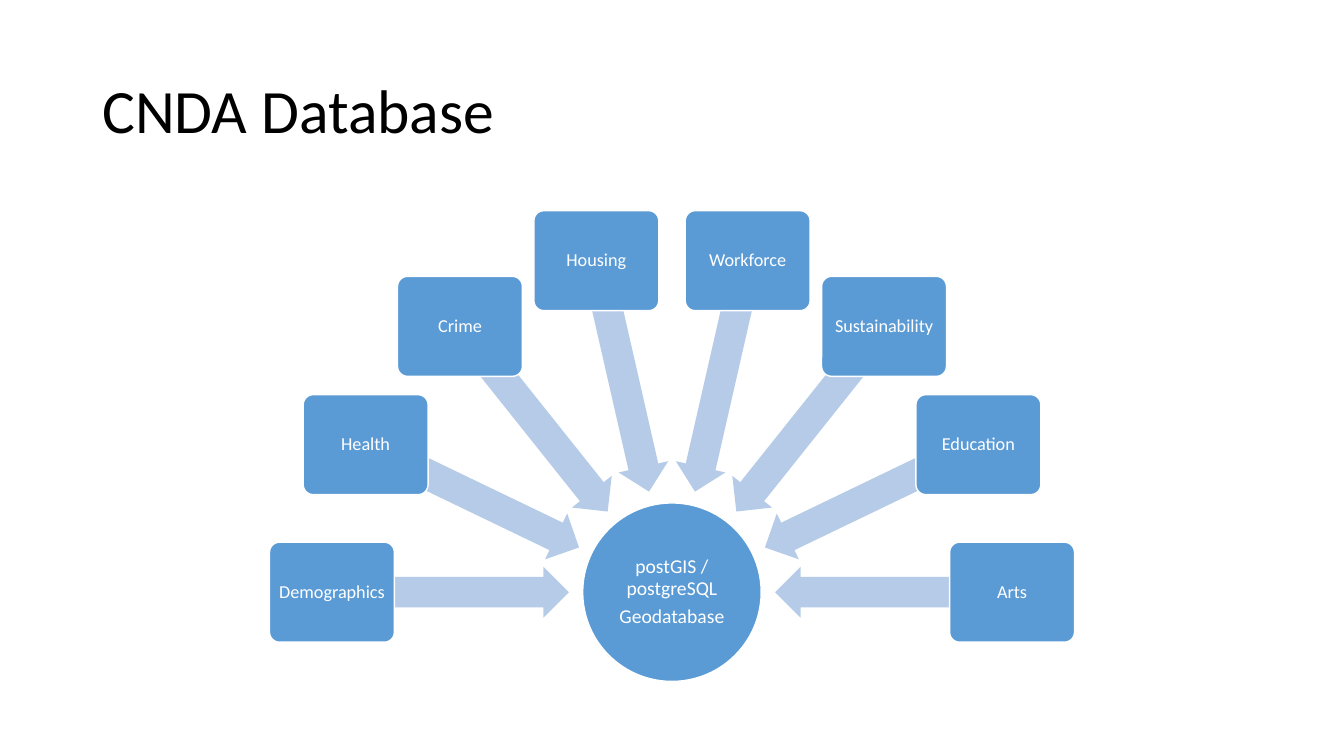
from math import cos, radians, sin

from pptx import Presentation
from pptx.dml.color import RGBColor
from pptx.enum.shapes import MSO_SHAPE
from pptx.enum.text import MSO_ANCHOR, PP_ALIGN
from pptx.util import Pt

ELLIPSE = MSO_SHAPE.OVAL
ROUNDED = MSO_SHAPE.ROUNDED_RECTANGLE
ARROW = MSO_SHAPE.LEFT_ARROW
MIDDLE = MSO_ANCHOR.MIDDLE
CENTER = PP_ALIGN.CENTER

TITLE = "CNDA Database"
HUB = ["postGIS / postgreSQL", "Geodatabase"]
TOPICS = ["Demographics", "Health", "Crime", "Housing",
          "Workforce", "Sustainability", "Education", "Arts"]

FONT = "Calibri"
BLUE, PALE_BLUE, WHITE, BLACK = "5B9BD5", "B5CBE7", "FFFFFF", "000000"
HUB_X, HUB_Y, HUB_SIZE = 480, 423, 127.5
TOPIC_RADIUS, TOPIC_W, TOPIC_H = 242.9, 89.2, 71.4
ARROW_RADIUS, ARROW_W, ARROW_H = 158.3, 169.2, 36.3


def color(hex_value):
    return RGBColor.from_string(hex_value)


def write(frame, lines, size, hex_value, align=None, space_after=0):
    frame.word_wrap = True
    frame.vertical_anchor = MIDDLE
    frame.text = "\n".join(lines)
    for paragraph in frame.paragraphs:
        paragraph.alignment = align
        paragraph.line_spacing = 0.9
        paragraph.space_after = Pt(space_after)
        paragraph.font.name = FONT
        paragraph.font.size = Pt(size)
        paragraph.font.color.rgb = color(hex_value)


def add_centered(kind, x, y, width, height, fill):
    shape = slide.shapes.add_shape(
        kind, Pt(x - width / 2), Pt(y - height / 2), Pt(width), Pt(height))
    shape.shadow.inherit = False
    shape.fill.solid()
    shape.fill.fore_color.rgb = color(fill)
    return shape


def add_node(kind, x, y, width, height, lines, size, inset):
    node = add_centered(kind, x, y, width, height, BLUE)
    node.line.color.rgb = color(WHITE)
    node.line.width = Pt(1)
    frame = node.text_frame
    frame.margin_left = frame.margin_right = Pt(inset)
    frame.margin_top = frame.margin_bottom = Pt(inset)
    write(frame, lines, size, WHITE, CENTER, size * 0.35)
    return node


def around_hub(angle, radius):
    return (HUB_X + radius * cos(radians(angle)),
            HUB_Y + radius * sin(radians(angle)))


deck = Presentation()
deck.slide_width, deck.slide_height = Pt(960), Pt(540)
slide = deck.slides.add_slide(deck.slide_layouts[6])

title = slide.shapes.add_textbox(Pt(66), Pt(28.75), Pt(828), Pt(104.4))
write(title.text_frame, [TITLE], 44, BLACK)

add_node(ELLIPSE, HUB_X, HUB_Y, HUB_SIZE, HUB_SIZE, HUB, 14, 0.7)

for index, topic in enumerate(TOPICS):
    angle = 180 + 180 * index / (len(TOPICS) - 1)
    arrow = add_centered(ARROW, *around_hub(angle, ARROW_RADIUS),
                         ARROW_W, ARROW_H, PALE_BLUE)
    arrow.line.fill.background()
    arrow.adjustments[0] = 0.6
    arrow.adjustments[1] = 0.5
    arrow.rotation = angle % 360
    box = add_node(ROUNDED, *around_hub(angle, TOPIC_RADIUS),
                   TOPIC_W, TOPIC_H, [topic], 13, 2)
    box.adjustments[0] = 0.1

deck.save("out.pptx")
